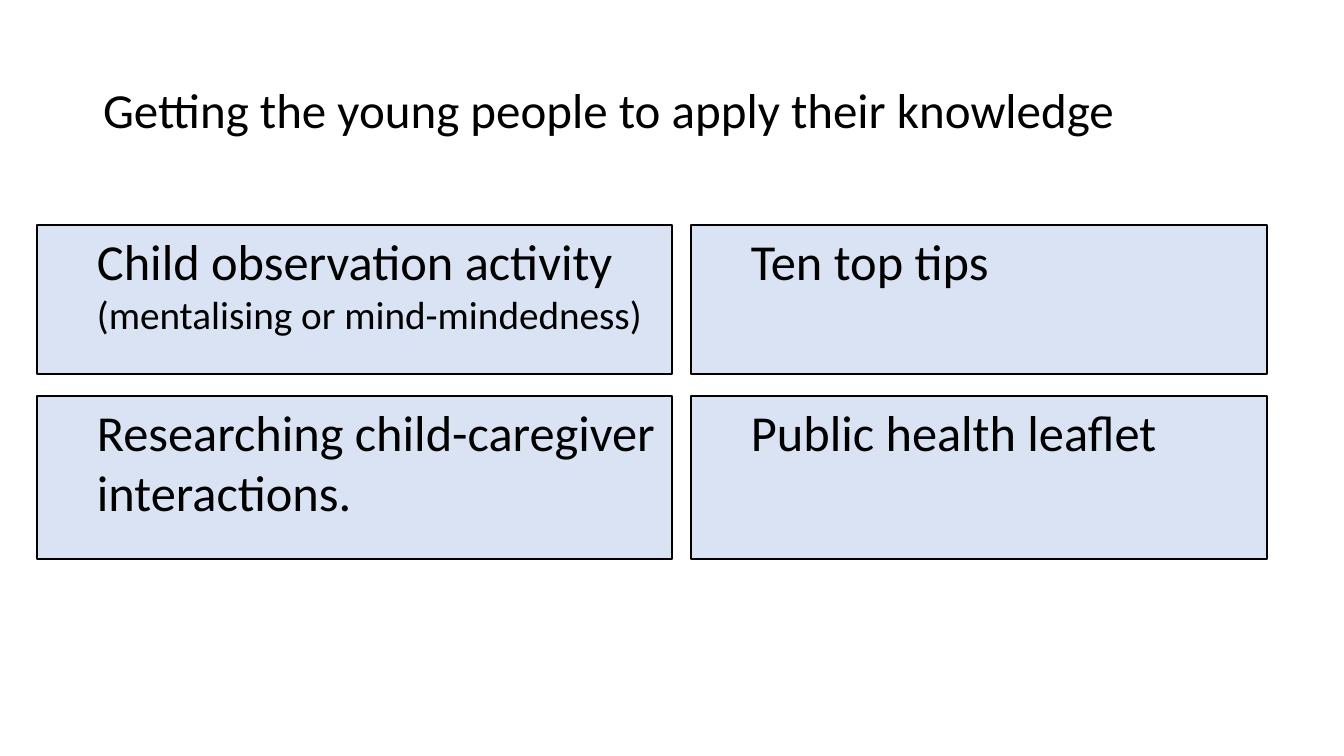
from pptx import Presentation
from pptx.dml.color import RGBColor
from pptx.enum.shapes import MSO_SHAPE
from pptx.enum.text import MSO_ANCHOR, MSO_AUTO_SIZE, PP_ALIGN
from pptx.util import Emu, Pt

RECTANGLE = MSO_SHAPE.RECTANGLE
TOP, MIDDLE = MSO_ANCHOR.TOP, MSO_ANCHOR.MIDDLE
NO_AUTOFIT = MSO_AUTO_SIZE.NONE
LEFT = PP_ALIGN.LEFT

# Content: each activity is a list of (text, size in points)
TITLE = "Getting the young people to apply their knowledge"
ACTIVITIES = [
    [
        [("Child observation activity", 36), ("(mentalising or mind-mindedness)", 28)],
        [("Ten top tips", 36)],
    ],
    [
        [("Researching child-caregiver interactions.", 36)],
        [("Public health leaflet", 36)],
    ],
]

# Layout in px
SLIDE_SIZE = (1344, 756)
TITLE_BOX = (93, 40, 1159, 146)
COLUMNS = [(37, 635), (691, 576)]  # left, width
ROWS = [(225, 149), (396, 163)]  # top, height
TEXT_INDENT = 50
EMU_PER_PX = 12192000 / SLIDE_SIZE[0]

FONT = "Calibri"
BLACK, PALE_BLUE = "000000", "DAE3F3"


def px(length):
    return Emu(round(length * EMU_PER_PX))


def colour(hex_value):
    return RGBColor.from_string(hex_value)


def set_format(target, values):
    for name, value in values.items():
        setattr(target, name, value)


def style_font(font, size):
    set_format(font, {"name": FONT, "size": Pt(size), "bold": False})
    font.color.rgb = colour(BLACK)


def add_activity(slide, box, lines):
    card = slide.shapes.add_shape(RECTANGLE, *map(px, box))
    card.shadow.inherit = False
    card.fill.solid()
    card.fill.fore_color.rgb = colour(PALE_BLUE)
    card.line.color.rgb = colour(BLACK)
    card.line.width = Pt(1.75)

    frame = card.text_frame
    set_format(frame, {"word_wrap": True, "auto_size": NO_AUTOFIT,
                       "vertical_anchor": TOP})
    for number, (text, size) in enumerate(lines):
        paragraph = frame.add_paragraph() if number else frame.paragraphs[0]
        set_format(paragraph, {"text": text, "level": 1, "alignment": LEFT})
        properties = paragraph._p.get_or_add_pPr()
        properties.set("marL", str(px(TEXT_INDENT)))
        properties.set("indent", "0")
        style_font(paragraph.runs[0].font, size)


def main():
    deck = Presentation()
    deck.slide_width, deck.slide_height = map(px, SLIDE_SIZE)
    slide = deck.slides.add_slide(deck.slide_layouts[5])

    # Title
    title = slide.shapes.title
    set_format(title, dict(zip(("left", "top", "width", "height"), map(px, TITLE_BOX))))
    set_format(title.text_frame, {"text": TITLE, "word_wrap": True,
                                  "auto_size": NO_AUTOFIT, "vertical_anchor": MIDDLE})
    heading = title.text_frame.paragraphs[0]
    set_format(heading, {"alignment": LEFT, "line_spacing": 0.9})
    style_font(heading.runs[0].font, 35)

    # Grid of activities
    for (top, height), row in zip(ROWS, ACTIVITIES):
        for (left, width), lines in zip(COLUMNS, row):
            add_activity(slide, (left, top, width, height), lines)

    deck.save("out.pptx")


if __name__ == "__main__":
    main()
